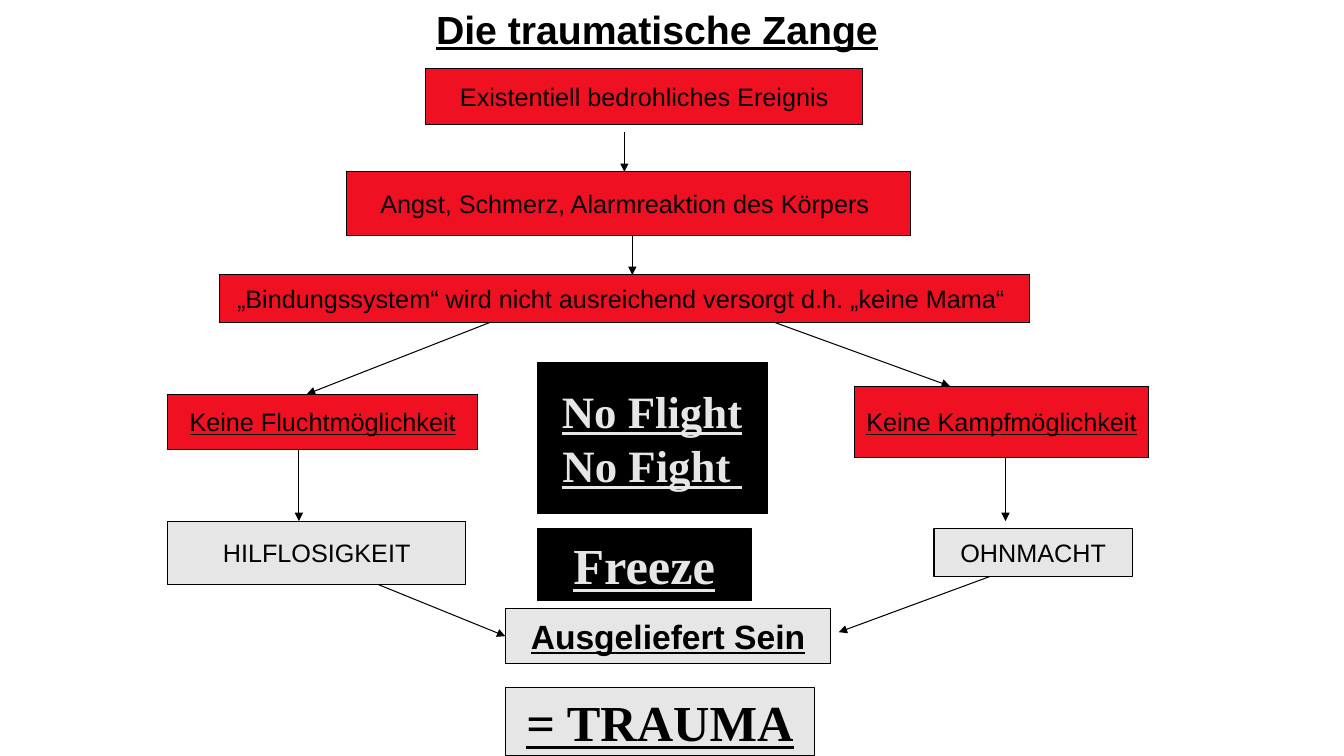
from lxml import etree
from pptx import Presentation
from pptx.dml.color import RGBColor
from pptx.enum.shapes import MSO_CONNECTOR, MSO_SHAPE
from pptx.enum.text import MSO_ANCHOR, MSO_AUTO_SIZE, PP_ALIGN
from pptx.oxml.ns import qn
from pptx.util import Inches, Mm, Pt

RECTANGLE = MSO_SHAPE.RECTANGLE
STRAIGHT = MSO_CONNECTOR.STRAIGHT
TOP, MIDDLE = MSO_ANCHOR.TOP, MSO_ANCHOR.MIDDLE
LEFT, CENTER = PP_ALIGN.LEFT, PP_ALIGN.CENTER
NO_FIT, GROW = MSO_AUTO_SIZE.NONE, MSO_AUTO_SIZE.SHAPE_TO_FIT_TEXT
LEFT_SIDE = 1

COLORS = {"red": "EF1121", "grey": "E7E6E6", "black": "000000"}
SANS, SERIF = "Arial", "Times New Roman"

STYLES = {
    "title": (SANS, 28, True, True, "black"),
    "plain": (SANS, 18, False, False, "black"),
    "underlined": (SANS, 18, False, True, "black"),
    "strong": (SANS, 24, True, True, "black"),
    "trauma": (SERIF, 36, True, True, "black"),
    "reaction": (SERIF, 32, True, True, "grey"),
    "freeze": (SERIF, 36, True, True, "grey"),
}

TITLE = ("Die traumatische Zange", (54, 0.35, 58.4, 7.2))

# name: lines, (column, row, columns, rows), fill, style
BOXES = {
    "alarm": (["Angst, Schmerz, Alarmreaktion des Körpers "], (44, 22, 71, 8), "red", "plain"),
    "event": (["Existentiell bedrohliches Ereignis"], (54, 9, 55, 7), "red", "plain"),
    "bonding": (["„Bindungssystem“ wird nicht ausreichend versorgt d.h. „keine Mama“ "],
                (28, 35, 102, 6), "red", "plain"),
    "no_escape": (["Keine Fluchtmöglichkeit"], (21.5, 50, 39, 7), "red", "underlined"),
    "helpless": (["HILFLOSIGKEIT"], (21.5, 66, 37.5, 8), "grey", "plain"),
    "no_combat": (["Keine Kampfmöglichkeit"], (108, 49, 37, 9), "red", "underlined"),
    "powerless": (["OHNMACHT"], (118, 67, 25, 6), "grey", "plain"),
    "at_mercy": (["Ausgeliefert Sein"], (64, 77, 41, 7), "grey", "strong"),
    "trauma": (["= TRAUMA"], (64, 87, 39, 8.6), "grey", "trauma"),
    "reaction": (["No Flight", "No Fight "], (68, 46, 29, 19), "black", "reaction"),
    "freeze": (["Freeze"], (68, 67, 27, 9), "black", "freeze"),
}

# start, end, box joined at its left side
ARROWS = [
    ((79, 17), (79, 22), None),
    ((80, 30), (80, 35), None),
    ((62, 41), (39, 50), None),
    ((98, 41), (120, 49), None),
    ((38, 57), (38, 66), None),
    ((127, 58), (127, 66), None),
    ((48, 74), (64, 80.5), "at_mercy"),
    ((125, 73), (106, 80), None),
]

CELL = Mm(2)
ORIGIN = Mm(-0.7)
LINE_WIDTH = Pt(0.75)


def color(name):
    return RGBColor.from_string(COLORS[name])


def point(column, row):
    return round(ORIGIN + column * CELL), round(ORIGIN + row * CELL)


def place(area):
    column, row, columns, rows = area
    return (*point(column, row), round(columns * CELL), round(rows * CELL))


def write(frame, lines, style, align, anchor, fit):
    name, size, bold, underline, ink = STYLES[style]
    font_format = {"name": name, "size": Pt(size), "bold": bold, "underline": underline}
    for key, value in {"word_wrap": False, "auto_size": fit, "vertical_anchor": anchor}.items():
        setattr(frame, key, value)
    for index, line in enumerate(lines):
        para = frame.add_paragraph() if index else frame.paragraphs[0]
        para.alignment = align
        span = para.add_run()
        span.text = line
        for key, value in font_format.items():
            setattr(span.font, key, value)
        span.font.color.rgb = color(ink)


def outline(item):
    item.line.color.rgb = color("black")
    item.line.width = LINE_WIDTH


def add_box(page, lines, area, fill, style):
    box = page.shapes.add_shape(RECTANGLE, *place(area))
    box.shadow.inherit = False
    box.fill.solid()
    box.fill.fore_color.rgb = color(fill)
    outline(box)
    write(box.text_frame, lines, style, CENTER, MIDDLE, NO_FIT)
    return box


def add_arrow(page, start, end, target):
    arrow = page.shapes.add_connector(STRAIGHT, *point(*start), *point(*end))
    outline(arrow)
    etree.SubElement(arrow.line._get_or_add_ln(), qn("a:tailEnd"), type="triangle")
    etree.SubElement(arrow._element.spPr, qn("a:effectLst"))
    if target:
        arrow.end_connect(target, LEFT_SIDE)


def main():
    deck = Presentation()
    deck.slide_width, deck.slide_height = Inches(13.33), Inches(7.5)
    page = deck.slides.add_slide(deck.slide_layouts[5])

    heading, area = TITLE
    title = page.shapes.title
    title.left, title.top, title.width, title.height = place(area)
    write(title.text_frame, [heading], "title", LEFT, TOP, GROW)

    boxes = {name: add_box(page, *content) for name, content in BOXES.items()}
    for start, end, target in ARROWS:
        add_arrow(page, start, end, boxes.get(target))

    deck.save("out.pptx")


if __name__ == "__main__":
    main()
